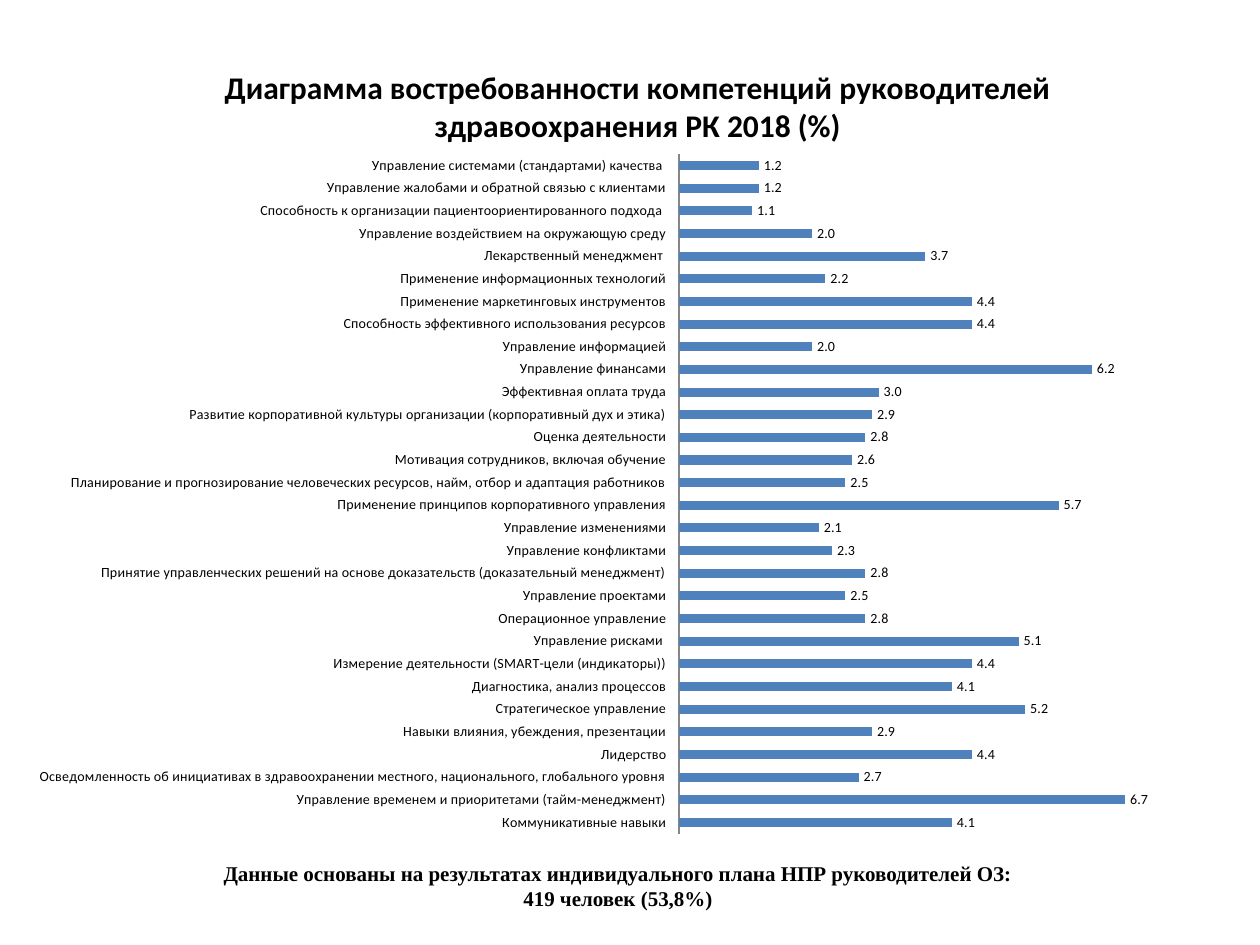
from pptx import Presentation
from pptx.chart.data import CategoryChartData
from pptx.dml.color import RGBColor
from pptx.enum.chart import XL_CHART_TYPE, XL_LABEL_POSITION, XL_TICK_LABEL_POSITION, XL_TICK_MARK
from pptx.enum.text import MSO_ANCHOR, PP_ALIGN
from pptx.oxml import parse_xml
from pptx.oxml.ns import nsdecls, qn
from pptx.util import Inches, Pt

BAR = XL_CHART_TYPE.BAR_CLUSTERED
OUTSIDE = XL_LABEL_POSITION.OUTSIDE_END
LOW = XL_TICK_LABEL_POSITION.LOW
NO_TICK = XL_TICK_MARK.NONE
MIDDLE = MSO_ANCHOR.MIDDLE
CENTER = PP_ALIGN.CENTER
TITLE_ONLY = 5

CHART_TITLE = "Диаграмма востребованности компетенций руководителей здравоохранения РК 2018 (%)"
CAPTION = [
    "Данные основаны на результатах индивидуального плана НПР руководителей ОЗ:",
    "419 человек (53,8%)",
]
# Competencies from the bottom bar to the top one
DEMAND = [
    ("Коммуникативные навыки", 4.1),
    ("Управление временем и приоритетами (тайм-менеджмент)", 6.7),
    ("Осведомленность об инициативах в здравоохранении местного, национального, глобального уровня", 2.7),
    ("Лидерство", 4.4),
    ("Навыки влияния, убеждения, презентации", 2.9),
    ("Стратегическое управление", 5.2),
    ("Диагностика, анализ процессов", 4.1),
    ("Измерение деятельности (SMART-цели (индикаторы))", 4.4),
    ("Управление рисками ", 5.1),
    ("Операционное управление", 2.8),
    ("Управление проектами", 2.5),
    ("Принятие управленческих решений на основе доказательств (доказательный менеджмент)", 2.8),
    ("Управление конфликтами", 2.3),
    ("Управление изменениями", 2.1),
    ("Применение принципов корпоративного управления", 5.7),
    ("Планирование и прогнозирование человеческих ресурсов, найм, отбор и адаптация работников", 2.5),
    ("Мотивация сотрудников, включая обучение", 2.6),
    ("Оценка деятельности", 2.8),
    ("Развитие корпоративной культуры организации (корпоративный дух и этика)", 2.9),
    ("Эффективная оплата труда", 3.0),
    ("Управление финансами", 6.2),
    ("Управление информацией", 2.0),
    ("Способность эффективного использования ресурсов", 4.4),
    ("Применение маркетинговых инструментов", 4.4),
    ("Применение информационных технологий", 2.2),
    ("Лекарственный менеджмент ", 3.7),
    ("Управление воздействием на окружающую среду", 2.0),
    ("Способность к организации пациентоориентированного подхода ", 1.1),
    ("Управление жалобами и обратной связью с клиентами", 1.2),
    ("Управление системами (стандартами) качества ", 1.2),
]


def color(hex_text):
    return RGBColor.from_string(hex_text)


def set_layout(parent, position, target="", **shares):
    """Place a chart part by shares of the chart's size."""
    old = parent.find(qn("c:layout"))
    if old is not None:
        parent.remove(old)
    inner = f'<c:layoutTarget val="{target}"/>' if target else ""
    inner += '<c:xMode val="edge"/><c:yMode val="edge"/>'
    inner += "".join(f'<c:{name} val="{share}"/>' for name, share in shares.items())
    parent.insert(position, parse_xml(
        f'<c:layout {nsdecls("c")}><c:manualLayout>{inner}</c:manualLayout></c:layout>'))


class SlideBuilder:
    text_color, bar_color, axis_color = "000000", "4F81BD", "868686"
    chart_font, caption_font = "Calibri", "Times New Roman"

    def __init__(self, deck):
        self.deck = deck
        self.slide = deck.slides.add_slide(deck.slide_layouts[TITLE_ONLY])

    def place(self, left, top, width, height):
        """Turn shares of the slide's size into lengths."""
        wide, high = self.deck.slide_width, self.deck.slide_height
        return int(left * wide), int(top * high), int(width * wide), int(height * high)

    def style(self, font, name, size, bold=False):
        font.name, font.size, font.bold = name, Pt(size), bold
        font.color.rgb = color(self.text_color)

    def caption(self, lines, *shares):
        box = self.slide.shapes.title
        box.left, box.top, box.width, box.height = self.place(*shares)
        box.text_frame.vertical_anchor = MIDDLE
        box.text_frame.word_wrap = True
        para = box.text_frame.paragraphs[0]
        para.alignment = CENTER
        for number, line in enumerate(lines):
            if number:
                para.add_line_break()
            span = para.add_run()
            span.text = line
            self.style(span.font, self.caption_font, 12, bold=True)

    def bar_chart(self, title, rows, *shares):
        data = CategoryChartData(number_format="0.0")
        data.categories = [name for name, _ in rows]
        data.add_series("Series 1", [value for _, value in rows])
        chart = self.slide.shapes.add_chart(BAR, *self.place(*shares), data).chart
        self.style(chart.font, self.chart_font, 10)
        chart.has_legend = False

        # Heading and plot area
        chart.has_title = True
        span = chart.chart_title.text_frame.paragraphs[0].add_run()
        span.text = title
        self.style(span.font, self.chart_font, 18, bold=True)
        chart.chart_title.include_in_layout = False
        set_layout(chart.chart_title._element, 1, x=0.16, y=0.04)
        set_layout(chart._chartSpace.chart.plotArea, 0, "inner", x=0.54, y=0.155, w=0.44, h=0.825)

        # Axes
        names, values = chart.category_axis, chart.value_axis
        names.major_tick_mark = names.minor_tick_mark = NO_TICK
        names.tick_label_position = LOW
        names.has_major_gridlines = values.has_major_gridlines = False
        names.format.line.color.rgb = color(self.axis_color)
        self.style(names.tick_labels.font, self.chart_font, 8)
        values.minimum_scale, values.maximum_scale = 0, 8
        values.visible = False

        # Bars and their values
        plot = chart.plots[0]
        plot.gap_width, plot.overlap, plot.vary_by_categories = 150, -25, False
        fill = plot.series[0].format.fill
        fill.solid()
        fill.fore_color.rgb = color(self.bar_color)
        plot.has_data_labels = True
        labels = plot.data_labels
        labels.show_value = True
        labels.number_format, labels.number_format_is_linked = "0.0", False
        labels.position = OUTSIDE
        self.style(labels.font, self.chart_font, 8)


def main():
    deck = Presentation()
    deck.slide_width, deck.slide_height = Inches(10), Inches(7.5)
    builder = SlideBuilder(deck)
    builder.bar_chart(CHART_TITLE, DEMAND, 0.02, 0.028, 0.961, 0.872)
    builder.caption(CAPTION, 0.012, 0.877, 0.957, 0.121)
    deck.save("out.pptx")


if __name__ == "__main__":
    main()
